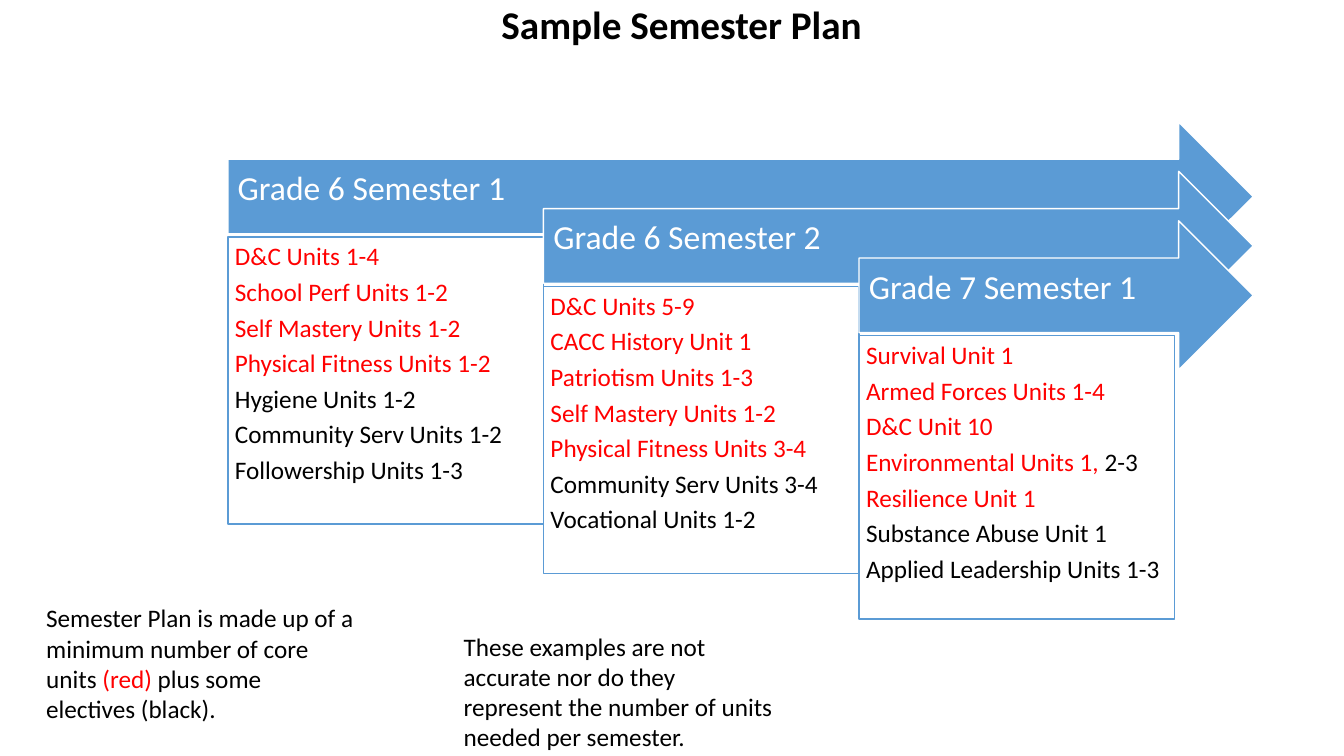
from pptx import Presentation
from pptx import util as u
from pptx.dml.color import RGBColor
from pptx.enum import shapes, text

COLORS = {"band": "5B9BD5", "core": "FF0000", "elective": "000000", "paper": "FFFFFF"}
FONT = "Calibri"

# Staircase grid, in inches: each semester steps one column right, one row down
LEFT, TOP, COLUMN, ROW = 2.26, 1.21, 3.13, 0.49
ARROW_TIP, ARROW_HEIGHT, CARD_DROP = 12.43, 1.48, 1.14

# Each semester: heading, card height, core units, mixed unit, later lines.
# A line is a list of (words, colour name) pieces.
SEMESTERS = [
    ("Grade 6 Semester 1", 2.85, [
        [("D&C Units 1-4", "core")],
        [("School Perf Units 1-2", "core")],
        [("Self Mastery Units 1-2", "core")],
        [("Physical Fitness Units 1-2", "core")],
        [("Hygiene Units 1-2", "elective")],
        [("Community Serv Units 1-2", "elective")],
        [("Followership Units 1-3", "elective")]]),
    ("Grade 6 Semester 2", 2.85, [
        [("D&C Units 5-9", "core")],
        [("CACC History Unit 1", "core")],
        [("Patriotism Units 1-3", "core")],
        [("Self Mastery Units 1-2", "core")],
        [("Physical Fitness Units 3-4", "core")],
        [("Community Serv Units 3-4", "elective")],
        [("Vocational Units 1-2", "elective")]]),
    ("Grade 7 Semester 1", 2.81, [
        [("Survival Unit 1", "core")],
        [("Armed Forces Units 1-4", "core")],
        [("D&C Unit 10", "core")],
        [("Environmental Units 1, ", "core"), ("2-3", "elective")],
        [("Resilience Unit 1", "core")],
        [("Substance Abuse Unit 1", "elective")],
        [("Applied Leadership Units 1-3", "elective")]]),
]

NOTES = [
    (0.36, 5.93, [("Semester Plan is made up of a minimum number of core units ", "elective"),
                  ("(red) ", "core"), ("plus some electives (black).", "elective")]),
    (4.5, 6.21, [("These examples are not accurate nor do they represent the number "
                  "of units needed per semester.", "elective")]),
]


def rgb(name):
    return RGBColor.from_string(COLORS[name])


def write_lines(frame, lines, size, spacing=1.0, after=0, bold=False,
                align=text.PP_ALIGN.LEFT):
    for index, line in enumerate(lines):
        paragraph = frame.paragraphs[0] if index == 0 else frame.add_paragraph()
        paragraph.alignment = align
        paragraph.line_spacing = spacing
        paragraph.space_before = u.Pt(0)
        paragraph.space_after = u.Pt(after)
        for words, color in line:
            run = paragraph.add_run()
            run.text = words
            run.font.name, run.font.size, run.font.bold = FONT, u.Pt(size), bold
            run.font.color.rgb = rgb(color)


def add_panel(slide, preset, box, fill, line, insets, anchor):
    panel = slide.shapes.add_shape(preset, *map(u.Inches, box))
    panel.shadow.inherit = False
    panel.fill.solid()
    panel.fill.fore_color.rgb = rgb(fill)
    panel.line.color.rgb = rgb(line)
    panel.line.width = u.Pt(1)
    frame = panel.text_frame
    frame.word_wrap = True
    frame.vertical_anchor = anchor
    (frame.margin_left, frame.margin_top,
     frame.margin_right, frame.margin_bottom) = map(u.Inches, insets)
    return frame


def add_semester(slide, step, heading, card_height, units):
    left, top = LEFT + step * COLUMN, TOP + step * ROW
    # Arrow with the heading
    banner = add_panel(slide, shapes.MSO_SHAPE.RIGHT_ARROW,
                       (left, top, ARROW_TIP - left, ARROW_HEIGHT),
                       "band", "paper", (0.1, 0.1, 0.28, 0.24), text.MSO_ANCHOR.MIDDLE)
    write_lines(banner, [[(heading, "paper")]], 24, spacing=0.9)
    # Card with the units
    card = add_panel(slide, shapes.MSO_SHAPE.RECTANGLE,
                     (left, top + CARD_DROP, COLUMN, card_height),
                     "paper", "band", (0.07,) * 4, text.MSO_ANCHOR.TOP)
    write_lines(card, units, 18, spacing=0.9, after=6)


def add_title(slide, words):
    title = slide.shapes.title
    title.left, title.top, title.width, title.height = map(u.Inches, (2.41, -0.05, 8.7, 0.57))
    frame = title.text_frame
    frame.auto_size = text.MSO_AUTO_SIZE.NONE
    frame.vertical_anchor = text.MSO_ANCHOR.TOP
    write_lines(frame, [[(words, "elective")]], 28, bold=True, align=text.PP_ALIGN.CENTER)


def add_note(slide, left, top, line):
    note = slide.shapes.add_textbox(*map(u.Inches, (left, top, 3.27, 1.31)))
    note.text_frame.word_wrap = True
    write_lines(note.text_frame, [line], 18)


def main():
    deck = Presentation()
    deck.slide_width, deck.slide_height = u.Inches(13.33), u.Inches(7.5)
    slide = deck.slides.add_slide(deck.slide_layouts.get_by_name("Title Only"))

    add_title(slide, "Sample Semester Plan")
    for step, (heading, card_height, units) in enumerate(SEMESTERS):
        add_semester(slide, step, heading, card_height, units)
    for left, top, line in NOTES:
        add_note(slide, left, top, line)

    deck.save("out.pptx")


if __name__ == "__main__":
    main()
